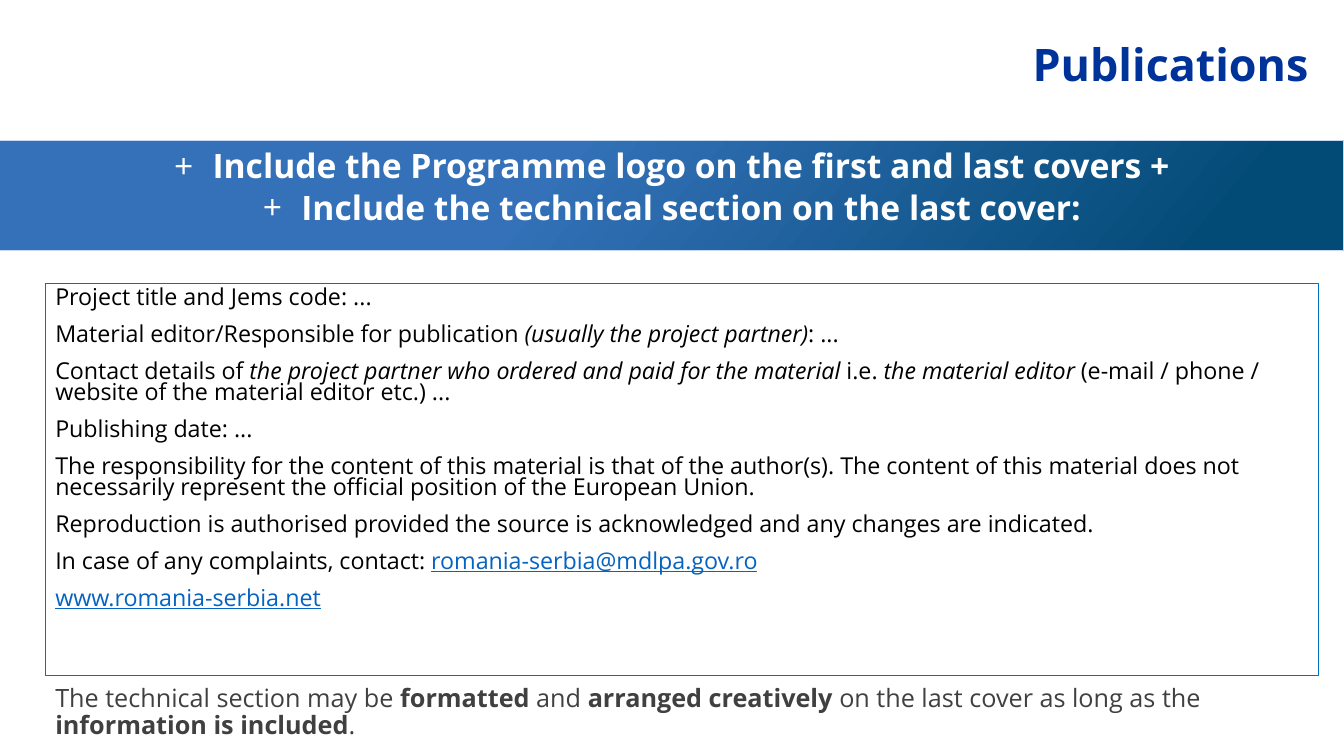
from pptx import Presentation
from pptx.dml.color import RGBColor
from pptx.enum.shapes import MSO_SHAPE
from pptx.enum.text import MSO_ANCHOR, PP_ALIGN
from pptx.oxml import parse_xml
from pptx.oxml.ns import nsdecls
from pptx.util import Inches, Pt

FONT = "Open Sans"
TITLE = [[("Publications", "b")]]
COVERS = [
    [("Include the Programme logo on the first and last covers +", "b")],
    [("Include the technical section on the last cover:", "b")],
]
DETAILS = [
    [("Project title and Jems code: ...", "")],
    [("Material editor/Responsible for publication ", ""),
     ("(usually the project partner)", "i"), (": ...", "")],
    [("Contact details of", ""),
     (" the project partner who ordered and paid for the material", "i"),
     (" i.e. ", ""), ("the material editor", "i"),
     (" (e-mail / phone / website of the material editor etc.) ...", "")],
    [("Publishing date: ...", "")],
    [("The responsibility for the content of this material is that of the "
      "author(s). The content of this material does not necessarily represent "
      "the official position of the European Union.", "")],
    [("Reproduction is authorised provided the source is acknowledged and "
      "any changes are indicated.", "")],
    [("In case of any complaints, contact: ", ""),
     ("romania-serbia@mdlpa.gov.ro", "u")],
    [("www.romania-serbia.net", "u")],
]
NOTE = [[
    ("The technical section may be ", ""), ("formatted", "b"), (" and ", ""),
    ("arranged creatively ", "b"), ("on the last cover as long as the ", ""),
    ("information is included", "b"), (".", ""),
]]
STOPS = [(0.4, "3471B8"), (0.9, "034B77")]
LEFT, WIDE = 0.45, 12.63


def paint(color, code):
    color.rgb = RGBColor.from_string(code)


def place(box):
    return [Inches(n) for n in box]


def add_plus(para):
    props = para._p.get_or_add_pPr()
    props.set("marL", str(Inches(0.38)))
    props.set("indent", str(-Inches(0.38)))
    for tag in (f'<a:buFont {nsdecls("a")} typeface="{FONT}"/>',
                f'<a:buChar {nsdecls("a")} char="+"/>'):
        props.append(parse_xml(tag))


def write(shape, paras, size, code, align=PP_ALIGN.LEFT, anchor=MSO_ANCHOR.TOP,
          line=1.0, before=0, after=0, plus=False):
    frame = shape.text_frame
    frame.word_wrap = True
    frame.vertical_anchor = anchor
    for i, runs in enumerate(paras):
        para = frame.add_paragraph() if i else frame.paragraphs[0]
        if plus:
            add_plus(para)
        para.alignment = align
        para.line_spacing = line
        para.space_before = Pt(before if i else 0)
        para.space_after = Pt(after)
        for text, style in runs:
            run = para.add_run()
            run.text = text
            font = run.font
            font.name, font.size = FONT, Pt(size)
            font.bold = style == "b"
            font.italic = style == "i"
            font.underline = style == "u"
            paint(font.color, "0563C1" if style == "u" else code)


def add_box(slide, box, edge):
    shape = slide.shapes.add_shape(MSO_SHAPE.RECTANGLE, *place(box))
    shape.shadow.inherit = False
    paint(shape.line.color, edge)
    shape.line.width = Pt(0.75)
    return shape


def main():
    deck = Presentation()
    deck.slide_width, deck.slide_height = Inches(13.33), Inches(7.5)
    slide = deck.slides.add_slide(deck.slide_layouts[6])

    band = add_box(slide, (0, 1.39, 13.33, 1.1), "C6D9F1")
    band.fill.gradient()
    band.fill.gradient_angle = 320
    for stop, (spot, code) in zip(band.fill.gradient_stops, STOPS):
        stop.position = spot
        paint(stop.color, code)
    write(band, COVERS, 24, "FFFFFF", PP_ALIGN.CENTER, before=1, plus=True)

    panel = add_box(slide, (LEFT, 2.81, WIDE, 3.89), "0070C0")
    panel.fill.background()
    write(panel, DETAILS, 16.6, "000000", line=0.76, before=3.3, after=8)

    note = slide.shapes.add_textbox(*place((LEFT, 6.82, WIDE, 0.51)))
    write(note, NOTE, 18, "404040", anchor=MSO_ANCHOR.MIDDLE, line=0.87)

    title = slide.shapes.add_textbox(*place((8.16, 0.08, 4.92, 1.1)))
    write(title, TITLE, 32, "003399", PP_ALIGN.RIGHT, MSO_ANCHOR.MIDDLE)

    deck.save("out.pptx")


if __name__ == "__main__":
    main()
